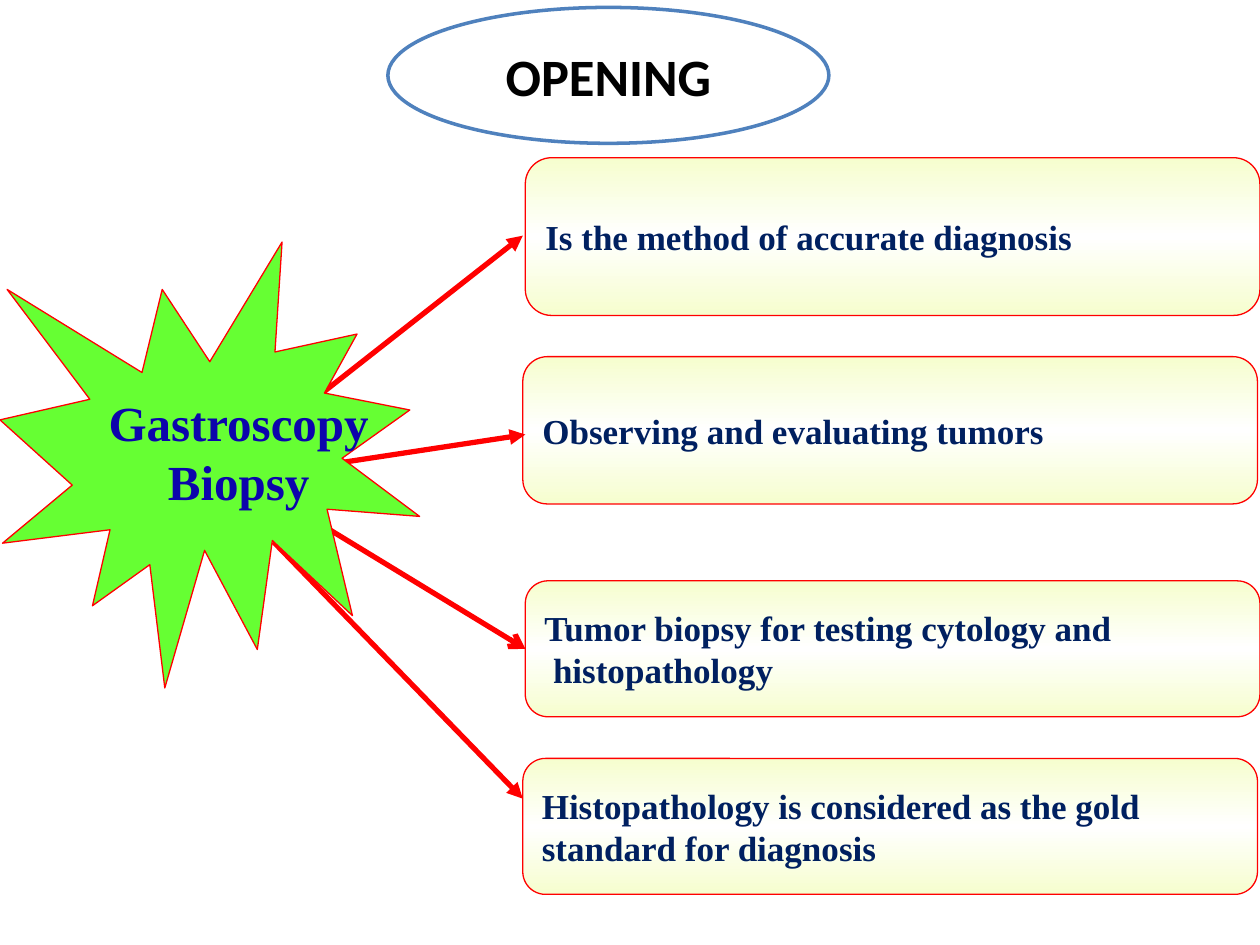
from copy import deepcopy
from dataclasses import dataclass

from lxml.etree import SubElement
from pptx import Presentation
from pptx.dml.color import RGBColor
from pptx.enum.shapes import MSO_CONNECTOR, MSO_SHAPE
from pptx.enum.text import MSO_ANCHOR, PP_ALIGN
from pptx.oxml.ns import qn
from pptx.util import Cm, Pt

RED = "FF0000"
CREAM = "F6FECE"
WHITE = "FFFFFF"
SERIF = "Times New Roman"
BOX_WIDTH = 14.81


@dataclass
class Benefit:
    text: str
    left: float
    top: float
    height: float


@dataclass
class Arrow:
    start: tuple[float, float]
    end: tuple[float, float]
    head: str = "triangle"


@dataclass
class TextStyle:
    font: str
    size: float
    color: str
    align: PP_ALIGN = PP_ALIGN.CENTER
    wrap: bool = False


BENEFITS = [
    Benefit("Is the method of accurate diagnosis", 10.59, 3.18, 3.18),
    Benefit("Observing and evaluating tumors", 10.54, 7.19, 2.97),
    Benefit("Tumor biopsy for testing cytology and\n histopathology", 10.59, 11.71, 2.74),
    Benefit("Histopathology is considered as the gold\nstandard for diagnosis", 10.54, 15.29, 2.74),
]
ARROWS = [
    Arrow((6.5, 7.92), (10.54, 4.75)),
    Arrow((6.91, 9.32), (10.59, 8.76)),
    Arrow((6.5, 10.59), (10.59, 13.08), "arrow"),
    Arrow((5.51, 10.92), (10.54, 16.1)),
]
TITLE_STYLE = TextStyle("Calibri", 30, "000000", wrap=True)
BENEFIT_STYLE = TextStyle(SERIF, 20, "002060", PP_ALIGN.LEFT)
TOPIC_STYLE = TextStyle(SERIF, 28, "0C04AC")


def rgb(value: str) -> RGBColor:
    return RGBColor.from_string(value)


def add_figure(slide, kind: MSO_SHAPE, box: tuple, outline: str, weight: float,
               text: str, style: TextStyle, fill: str = WHITE):
    figure = slide.shapes.add_shape(kind, *(Cm(length) for length in box))
    figure.shadow.inherit = False
    figure.fill.solid()
    figure.fill.fore_color.rgb = rgb(fill)
    figure.line.color.rgb = rgb(outline)
    figure.line.width = Pt(weight)
    frame = figure.text_frame
    frame.text = text
    frame.word_wrap = style.wrap
    frame.vertical_anchor = MSO_ANCHOR.MIDDLE
    for paragraph in frame.paragraphs:
        paragraph.alignment = style.align
        for run in paragraph.runs:
            run.font.name = style.font
            run.font.size = Pt(style.size)
            run.font.bold = True
            run.font.color.rgb = rgb(style.color)
    return figure


def add_benefit(slide, benefit: Benefit) -> None:
    box = (benefit.left, benefit.top, BOX_WIDTH, benefit.height)
    panel = add_figure(slide, MSO_SHAPE.ROUNDED_RECTANGLE, box, RED, 0.75,
                       benefit.text, BENEFIT_STYLE)
    panel.fill.gradient()
    panel.fill.gradient_angle = 270
    # The default gradient has two stops; this one needs a third
    stop_list = panel.element.spPr.find(".//" + qn("a:gsLst"))
    stop_list.append(deepcopy(stop_list[0]))
    for stop, position, color in zip(panel.fill.gradient_stops, (0, 0.5, 1),
                                     (CREAM, WHITE, CREAM)):
        stop.position = position
        stop.color.rgb = rgb(color)


def add_arrow(slide, arrow: Arrow) -> None:
    ends = (Cm(length) for length in arrow.start + arrow.end)
    connector = slide.shapes.add_connector(MSO_CONNECTOR.STRAIGHT, *ends)
    connector.line.color.rgb = rgb(RED)
    connector.line.width = Pt(3)
    properties = connector.element.spPr
    SubElement(properties.find(qn("a:ln")), qn("a:tailEnd"), type=arrow.head)
    SubElement(properties, qn("a:effectLst"))


def main() -> None:
    deck = Presentation()
    deck.slide_width, deck.slide_height = Cm(25.4), Cm(19.05)
    slide = deck.slides.add_slide(deck.slide_layouts[6])

    # Title
    add_figure(slide, MSO_SHAPE.OVAL, (7.82, 0.15, 8.89, 2.74), "4F81BD", 2,
               "OPENING", TITLE_STYLE)

    # Benefits and the arrows that lead to them
    for benefit in BENEFITS:
        add_benefit(slide, benefit)
    for arrow in ARROWS:
        add_arrow(slide, arrow)

    # Topic, in front of the arrow starts
    topic = add_figure(slide, MSO_SHAPE.EXPLOSION1, (0, 4.88, 8.46, 8.99), RED, 0.75,
                       "Gastroscopy\nBiopsy", TOPIC_STYLE, "66FF33")
    for paragraph in topic.text_frame.paragraphs:
        paragraph.level = 1
        indent = paragraph._p.get_or_add_pPr()
        indent.set("marL", str(Cm(1.27)))
        indent.set("indent", "0")

    deck.save("out.pptx")


if __name__ == "__main__":
    main()
